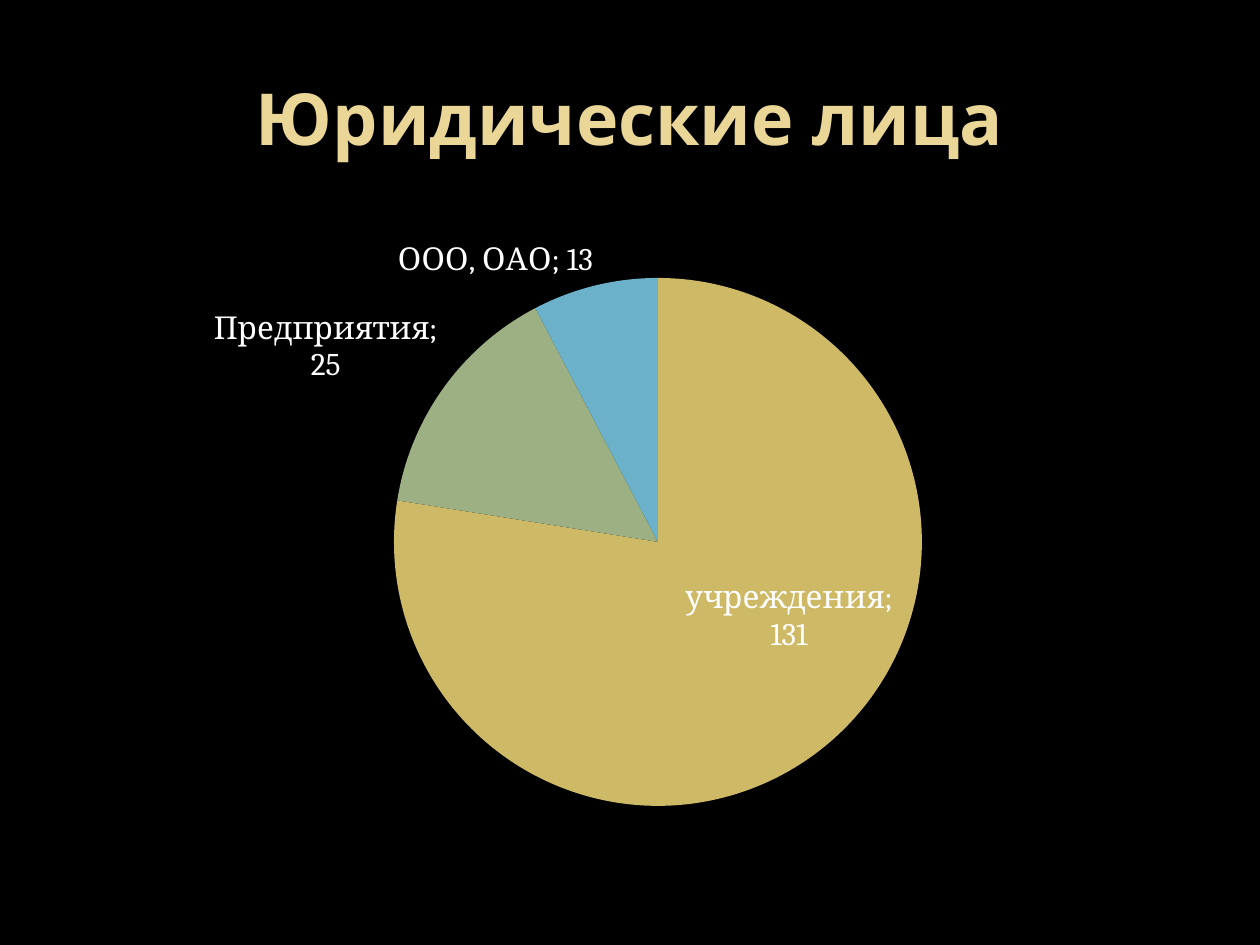
"""Build a slide with a pie chart of legal entities by kind."""
import pptx
import pptx.chart.data
import pptx.dml.color
import pptx.enum.chart
import pptx.enum.text
import pptx.oxml
import pptx.oxml.ns
import pptx.util

TITLE = "Юридические лица"
ENTITIES = [
    ("учреждения", 131, "institutions"),
    ("Предприятия", 25, "enterprises"),
    ("ООО, ОАО", 13, "companies"),
]
COLORS = {
    "background": "000000",
    "title": "EAD696",
    "label": "FFFFFF",
    "institutions": "CEB966",
    "enterprises": "9CB084",
    "companies": "6BB1C9",
}
PX = 914400 // 126
TITLE_BOX = (63, 38, 1134, 157)
CHART_BOX = (63, 220, 1134, 649)
PIE_BOX = (394, 278, 528, 528)
LABEL_SHIFT = (41, -24)


def color(name):
    return pptx.dml.color.RGBColor.from_string(COLORS[name])


def emu(box):
    return [value * PX for value in box]


def style_font(font, name, size, color_name):
    font.name = name
    font.size = pptx.util.Pt(size)
    font.color.rgb = color(color_name)


def manual_layout(tags):
    body = "".join(f'<c:{tag} val="{value}"/>' for tag, value in tags)
    namespace = pptx.oxml.ns.nsdecls("c")
    return pptx.oxml.parse_xml(
        f"<c:layout {namespace}><c:manualLayout>{body}</c:manualLayout></c:layout>"
    )


def add_title(slide):
    title = slide.shapes.title
    title.left, title.top, title.width, title.height = emu(TITLE_BOX)
    title.text_frame.vertical_anchor = pptx.enum.text.MSO_ANCHOR.MIDDLE
    paragraph = title.text_frame.paragraphs[0]
    paragraph.alignment = pptx.enum.text.PP_ALIGN.CENTER
    run = paragraph.add_run()
    run.text = TITLE
    run.font.bold = True
    style_font(run.font, "Open Sans", 41, "title")


def add_pie(slide):
    data = pptx.chart.data.CategoryChartData()
    data.categories = [name for name, _, _ in ENTITIES]
    data.add_series("Series 1", [count for _, count, _ in ENTITIES])
    chart = slide.shapes.add_chart(
        pptx.enum.chart.XL_CHART_TYPE.PIE, *emu(CHART_BOX), data
    ).chart
    chart.has_title = False
    chart.has_legend = False
    style_font(chart.font, "Cambria", 18, "label")
    plot = chart.plots[0]
    plot.vary_by_categories = True
    series = plot.series[0]
    for index, (_, _, color_name) in enumerate(ENTITIES):
        fill = series.points[index].format.fill
        fill.solid()
        fill.fore_color.rgb = color(color_name)
    place_pie(chart)
    add_labels(series)


def place_pie(chart):
    left, top, width, height = CHART_BOX
    pie_left, pie_top, pie_width, pie_height = PIE_BOX
    layout = manual_layout([
        ("layoutTarget", "inner"),
        ("xMode", "edge"),
        ("yMode", "edge"),
        ("x", (pie_left - left) / width),
        ("y", (pie_top - top) / height),
        ("w", pie_width / width),
        ("h", pie_height / height),
    ])
    plot_area = chart.element.find(".//" + pptx.oxml.ns.qn("c:plotArea"))
    old_layout = plot_area.find(pptx.oxml.ns.qn("c:layout"))
    if old_layout is not None:
        plot_area.remove(old_layout)
    plot_area.insert(0, layout)


def add_labels(series):
    positions = pptx.enum.chart.XL_LABEL_POSITION
    labels = series.data_labels
    labels.show_value = True
    labels.show_category_name = True
    labels.position = positions.OUTSIDE_END
    style_font(labels.font, "Cambria", 18, "label")
    inner_label = series.points[0].data_label
    inner_label.position = positions.CENTER
    style_font(inner_label.font, "Cambria", 18, "label")

    qn = pptx.oxml.ns.qn
    group = series.data_labels._element
    single = group.find(qn("c:dLbl"))
    single.find(qn("c:showCatName")).set("val", "1")
    shift_x, shift_y = LABEL_SHIFT
    single.find(qn("c:idx")).addnext(manual_layout([
        ("x", round(shift_x / CHART_BOX[2], 2)),
        ("y", round(shift_y / CHART_BOX[3], 2)),
    ]))
    for element in (single, group):
        last_flag = element.findall(qn("c:showBubbleSize"))
        anchor = last_flag[0] if last_flag else element.find(qn("c:showPercent"))
        anchor.addnext(pptx.oxml.parse_xml(
            f'<c:separator {pptx.oxml.ns.nsdecls("c")}>; </c:separator>'
        ))


def main():
    presentation = pptx.Presentation()
    presentation.slide_width, presentation.slide_height = emu((1260, 945))
    slide = presentation.slides.add_slide(presentation.slide_layouts[5])
    slide.background.fill.solid()
    slide.background.fill.fore_color.rgb = color("background")
    add_title(slide)
    add_pie(slide)
    presentation.save("out.pptx")


if __name__ == "__main__":
    main()
